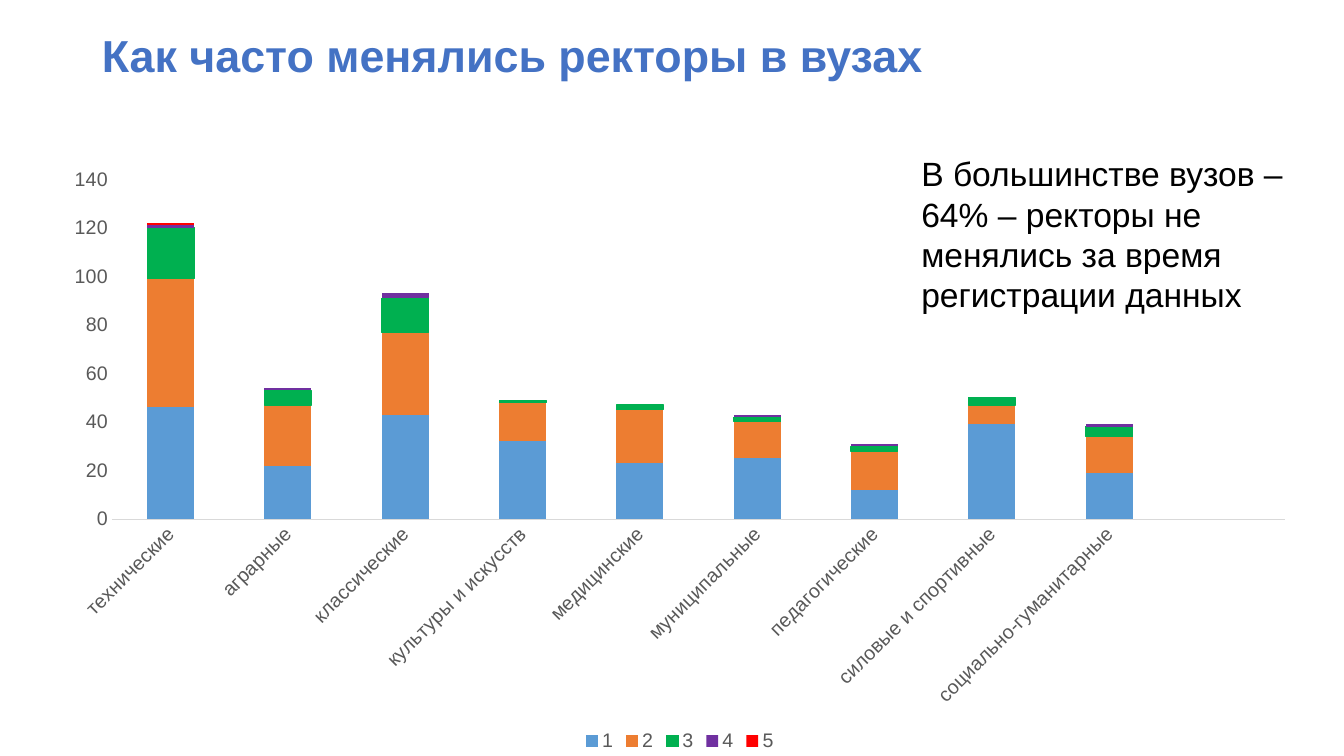
"""Build the slide on how often university rectors changed."""
from pptx import Presentation
from pptx.chart.data import CategoryChartData
from pptx.dml.color import RGBColor
from pptx.enum.chart import XL_CHART_TYPE as CT, XL_LEGEND_POSITION as LP, XL_TICK_MARK as TM
from pptx.enum.text import MSO_ANCHOR, MSO_AUTO_SIZE
from pptx.util import Pt


def rgb(color):
    return RGBColor.from_string(color)


def style(font, size, color, bold=False):
    font.name, font.size, font.bold = "Arial", Pt(size), bold
    font.color.rgb = rgb(color)


prs = Presentation()
prs.slide_width, prs.slide_height = Pt(960), Pt(540)
s = prs.slides.add_slide(prs.slide_layouts[5])

sp = s.shapes.title
sp.left, sp.top, sp.width, sp.height = Pt(65.5), Pt(-11), Pt(828), Pt(104.4)
tf = sp.text_frame
tf.vertical_anchor = MSO_ANCHOR.MIDDLE
tf.auto_size = MSO_AUTO_SIZE.NONE
p = tf.paragraphs[0]
p.alignment = 1
p.line_spacing = 0.9
r = p.add_run()
r.text = "Как часто менялись ректоры в вузах"
style(r.font, 32, "4472C4", True)

data = CategoryChartData()
data.categories = [
    "технические", "аграрные", "классические", "культуры и искусств", "медицинские",
    "муниципальные", "педагогические", "силовые и спортивные", "социально-гуманитарные", "",
]
series = [
    ("1", "5B9BD5", [46, 22, 43, 32, 23, 25, 12, 39, 19]),
    ("2", "ED7D31", [53, 25, 34, 16, 22, 15, 16, 8, 15]),
    ("3", "00B050", [21, 6, 14, 1, 2, 2, 2, 3, 4]),
    ("4", "7030A0", [1, 1, 2, 0, 0, 1, 1, 0, 1]),
    ("5", "FF0000", [1, 0, 0, 0, 0, 0, 0, 0, 0]),
]
for name, color, values in series:
    data.add_series(name, values + [None])

chart = s.shapes.add_chart(
    CT.COLUMN_STACKED, Pt(35.3), Pt(111.6), Pt(900.7), Pt(428.4), data
).chart
style(chart.font, 14, "000000")
chart.has_title = False
chart.has_legend = True
chart.legend.position = LP.BOTTOM
chart.legend.include_in_layout = False
style(chart.legend.font, 14, "595959")

plot = chart.plots[0]
plot.gap_width, plot.overlap, plot.vary_by_categories = 150, 100, False
for ser, (name, color, values) in zip(plot.series, series):
    ser.format.fill.solid()
    ser.format.fill.fore_color.rgb = rgb(color)
    ser.invert_if_negative = False
    if name == "3":
        ser.format.line.color.rgb = rgb(color)
        ser.format.line.width = Pt(0.75)

for axis in (chart.category_axis, chart.value_axis):
    axis.major_tick_mark = axis.minor_tick_mark = TM.NONE
    axis.has_major_gridlines = False
    style(axis.tick_labels.font, 14, "595959")
cat, val = chart.category_axis, chart.value_axis
cat.format.line.color.rgb = rgb("D9D9D9")
cat.format.line.width = Pt(0.75)
cat.tick_labels.font._element.getparent().getparent().getparent().bodyPr.set("rot", "-2700000")
val.format.line.fill.background()
val.minimum_scale, val.maximum_scale, val.major_unit = 0, 140, 20

tf = s.shapes.add_textbox(Pt(651), Pt(106), Pt(306), Pt(124)).text_frame
tf.word_wrap = True
tf.auto_size = MSO_AUTO_SIZE.SHAPE_TO_FIT_TEXT
r = tf.paragraphs[0].add_run()
r.text = "В большинстве вузов – 64% – ректоры не менялись за время регистрации данных"
style(r.font, 24, "000000")

prs.save("out.pptx")
